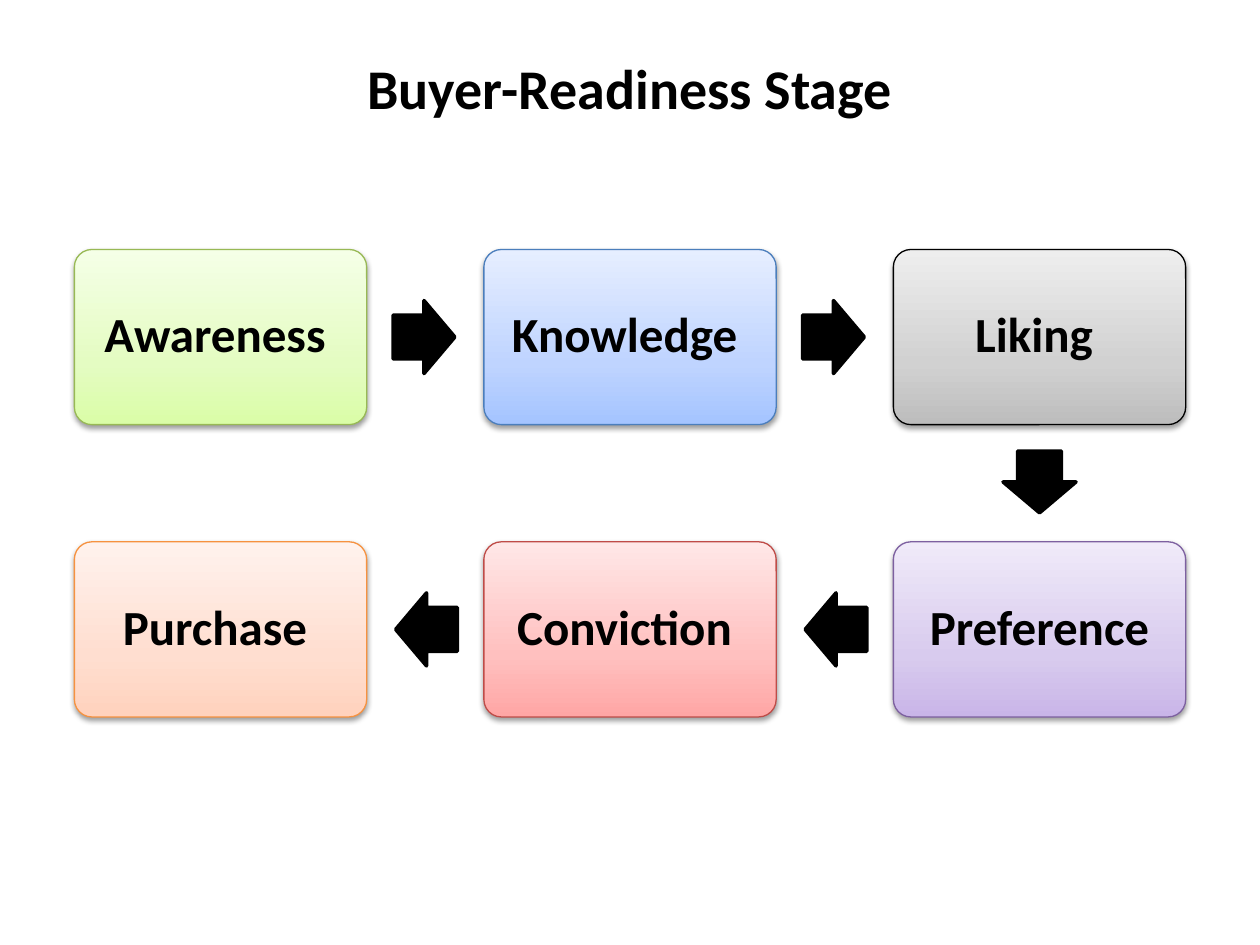
import copy
import math
from itertools import pairwise

from lxml import etree
from pptx import Presentation
from pptx.dml.color import RGBColor
from pptx.enum import shapes, text
from pptx.oxml.ns import qn
from pptx.util import Inches, Pt

FONT = "Calibri"
BLACK = RGBColor(0, 0, 0)
BOX_W, BOX_H = 2.32, 1.39
PITCH_X, PITCH_Y = 3.25, 2.32
ARROW_W, ARROW_H = 0.49, 0.58
ARROW_SHIFT = 0.01  # arrows sit slightly nearer the stage they leave
STOPS = (0, 0.35, 1)

# label, column, row, line colour, gradient colours from bottom to top
STAGES = [
    ("Awareness ", 0, 0, "98B955", ("DAFDA7", "E4FCC2", "F5FFE7")),
    ("Knowledge ", 1, 0, "4B7EBC", ("A4C4FF", "BFD4FF", "E6EEFF")),
    ("Liking ", 2, 0, "000000", ("BDBDBD", "D1D1D1", "EEEEEE")),
    ("Preference", 2, 1, "7D60A0", ("C9B5E8", "D8CBEE", "F0EAF9")),
    ("Conviction ", 1, 1, "BF4C48", ("FFA6A5", "FFC0BF", "FFE7E7")),
    ("Purchase ", 0, 1, "F69240", ("FFD2BD", "FFDED0", "FFF2ED")),
]


def format_text(tf, size):
    tf.word_wrap = True
    tf.vertical_anchor = text.MSO_ANCHOR.MIDDLE
    p = tf.paragraphs[0]
    p.alignment = text.PP_ALIGN.CENTER
    font = p.runs[0].font
    font.name, font.size, font.bold = FONT, Pt(size), True
    font.color.rgb = BLACK


def fill_gradient(sp, colors):
    sp.fill.gradient()
    sp.fill.gradient_angle = 90
    stop_list = sp._element.spPr.find(".//" + qn("a:gsLst"))
    stop_list.append(copy.deepcopy(stop_list[0]))
    for stop, position, color in zip(sp.fill.gradient_stops, STOPS, colors):
        stop.position = position
        stop.color.rgb = RGBColor.from_string(color)


def add_soft_shadow(sp):
    sp.shadow.inherit = False
    effects = sp._element.spPr.find(qn("a:effectLst"))
    shadow = etree.SubElement(
        effects, qn("a:outerShdw"), blurRad=str(Pt(3.1)), dist=str(Pt(1.6)),
        dir="5400000", rotWithShape="0")
    color = etree.SubElement(shadow, qn("a:srgbClr"), val="000000")
    etree.SubElement(color, qn("a:alpha"), val="38000")


def add_title(slide, left, top, width, height):
    title = slide.shapes.title
    title.left, title.top = Inches(left), Inches(top)
    title.width, title.height = Inches(width), Inches(height)
    title.text_frame.text = "Buyer-Readiness Stage"
    format_text(title.text_frame, 32)


def add_stage(slide, left, top, label, line, colors):
    sp = slide.shapes.add_shape(
        shapes.MSO_SHAPE.ROUNDED_RECTANGLE,
        Inches(left), Inches(top), Inches(BOX_W), Inches(BOX_H))
    sp.adjustments[0] = 0.1
    fill_gradient(sp, colors)
    sp.line.color.rgb = RGBColor.from_string(line)
    sp.line.width = Pt(0.75)
    add_soft_shadow(sp)
    tf = sp.text_frame
    tf.margin_left = tf.margin_right = Inches(0.12)
    tf.margin_top = tf.margin_bottom = Inches(0.12)
    tf.text = label
    tf.paragraphs[0].line_spacing = 0.9
    format_text(tf, 28)


def add_arrow(slide, start, end):
    """Place a block arrow midway between two stage centres."""
    (x1, y1), (x2, y2) = start, end
    angle = math.atan2(y2 - y1, x2 - x1)
    x = (x1 + x2) / 2 - ARROW_SHIFT * math.cos(angle)
    y = (y1 + y2) / 2 - ARROW_SHIFT * math.sin(angle)
    sp = slide.shapes.add_shape(
        shapes.MSO_SHAPE.RIGHT_ARROW,
        Inches(x - ARROW_W / 2), Inches(y - ARROW_H / 2),
        Inches(ARROW_W), Inches(ARROW_H))
    sp.rotation = math.degrees(angle)
    sp.adjustments[0], sp.adjustments[1] = 0.6, 0.5
    sp.fill.solid()
    sp.fill.fore_color.rgb = BLACK
    sp.line.color.rgb = BLACK
    sp.line.width = Pt(2)
    sp.shadow.inherit = False


def add_stage_flow(slide, left, top):
    centers = []
    for label, col, row, line, colors in STAGES:
        x, y = left + col * PITCH_X, top + row * PITCH_Y
        add_stage(slide, x, y, label, line, colors)
        centers.append((x + BOX_W / 2, y + BOX_H / 2))
    for start, end in pairwise(centers):
        add_arrow(slide, start, end)


def main():
    prs = Presentation()
    prs.slide_width, prs.slide_height = Inches(10), Inches(7.5)
    slide = prs.slides.add_slide(prs.slide_layouts[5])
    add_title(slide, 0.5, 0.3, 9, 0.78)
    add_stage_flow(slide, 0.59, 1.98)
    prs.save("out.pptx")


if __name__ == "__main__":
    main()
